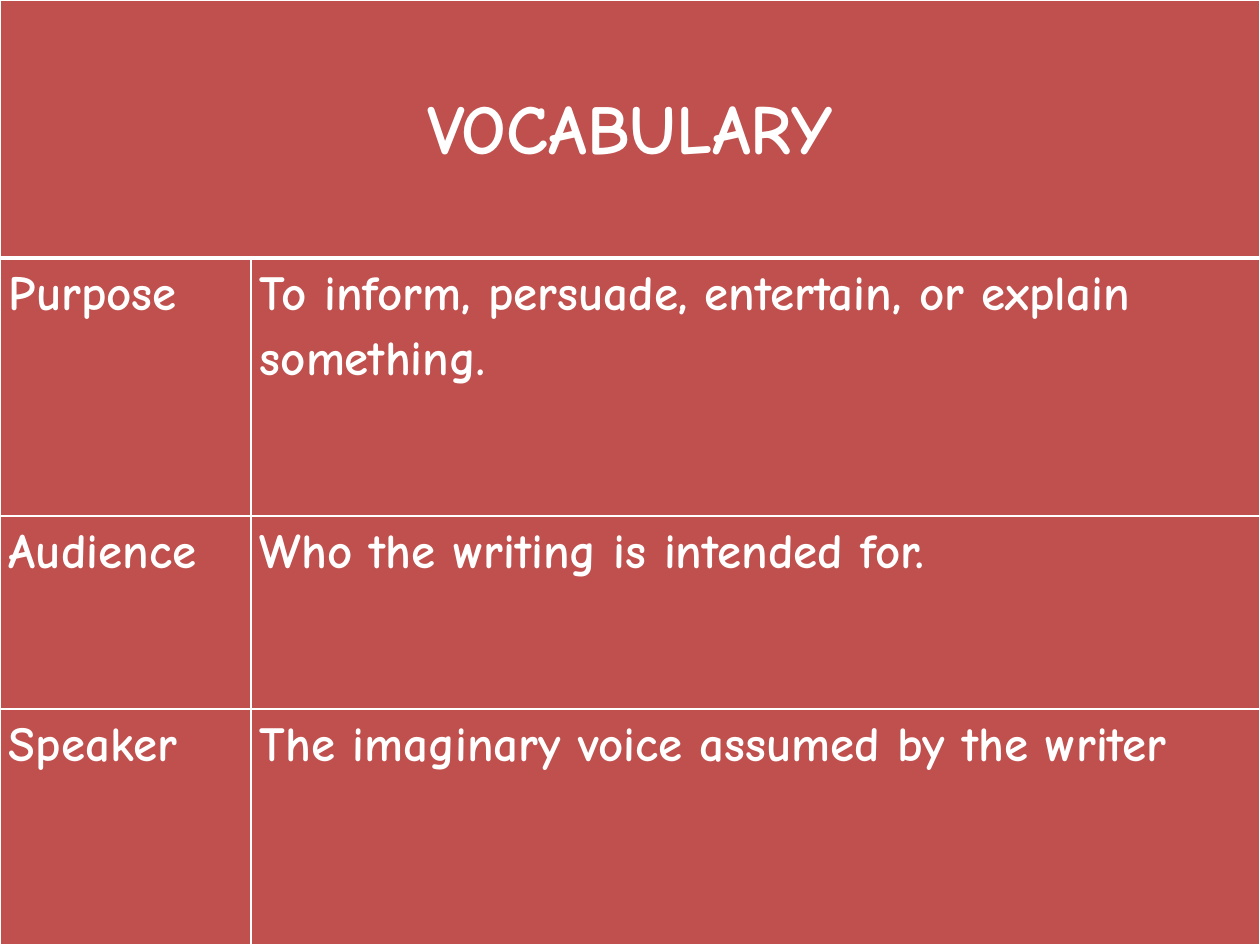
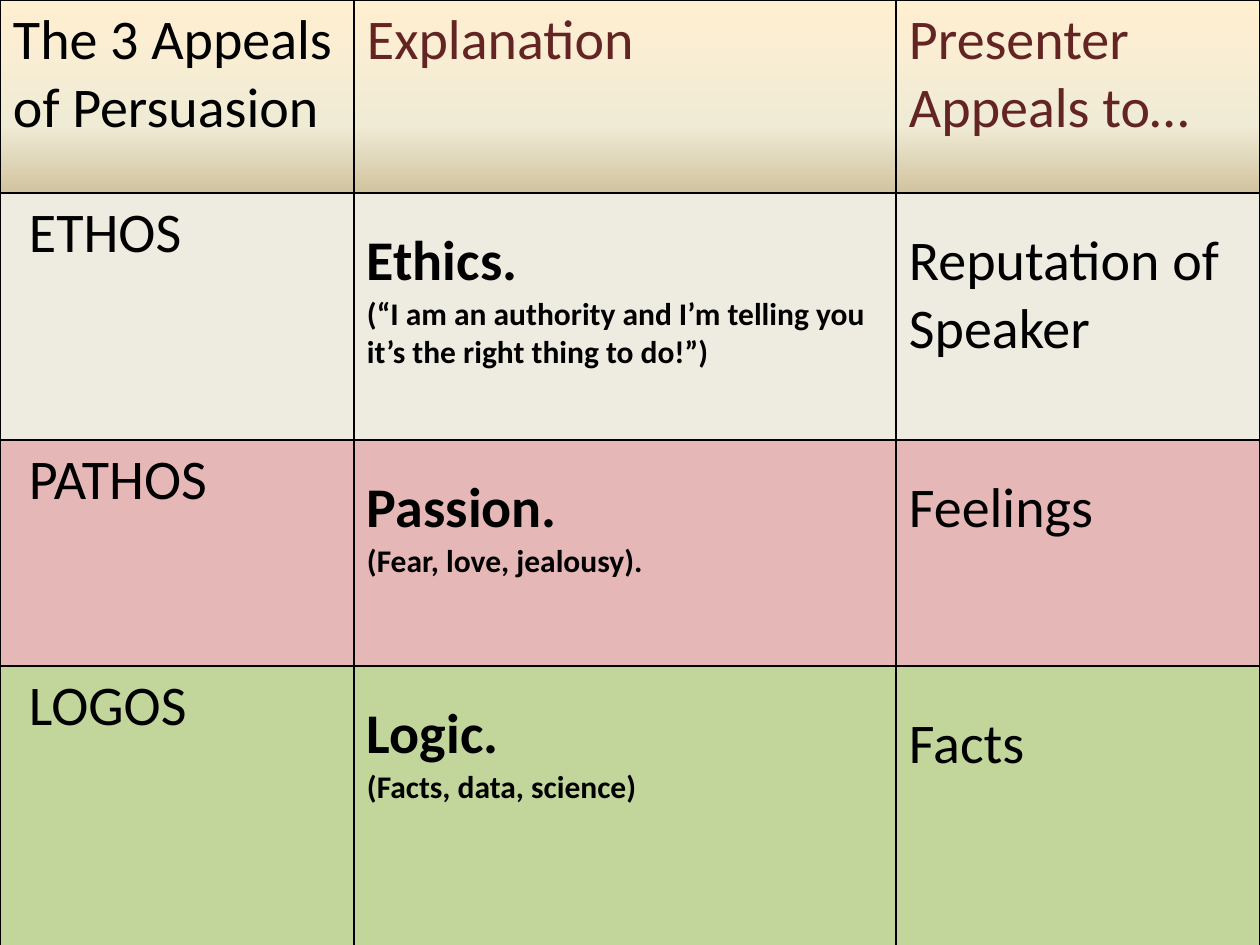
import pptx
import pptx.util
import pptx.dml.color
import pptx.enum.text
import pptx.oxml
import pptx.oxml.ns

PX = 914400 / 126
WIDTH, HEIGHT = 1260, 945

WHITE, BLACK, RED, MAROON = "FFFFFF", "000000", "C0504D", "632423"
SAND = [(0, "FFEFD1"), (65, "F0EBD5"), (100, "D1C39F")]
VOCABULARY = [
    ("Purpose", "To inform, persuade, entertain, or explain something."),
    ("Audience", "Who the writing is intended for."),
    ("Speaker", "The imaginary voice assumed by the writer"),
]
HEADINGS = [("The 3 Appeals of Persuasion", BLACK),
            ("Explanation", MAROON), ("Presenter Appeals to…", MAROON)]
# name, fill, meaning, example, what it appeals to, top margin of the last cell
APPEALS = [
    ("ETHOS", "EEECE1", "Ethics.",
     "(“I am an authority and I’m telling you it’s the right thing to do!”)",
     "Reputation of Speaker", 34),
    ("PATHOS", "E5B8B7", "Passion.", "(Fear, love, jealousy).", "Feelings", 34),
    ("LOGOS", "C2D59B", "Logic.", "(Facts, data, science)", "Facts", 44),
]


def px(n):
    return pptx.util.Emu(round(n * PX))


def rgb(color):
    return pptx.dml.color.RGBColor.from_string(color)


def add_slide(prs):
    s = prs.slides.add_slide(prs.slide_layouts[6])
    fill = s.background.fill
    fill.solid()
    fill.fore_color.rgb = rgb(BLACK)
    return s


def add_grid(s, x, y, cols, rows):
    """Add an unstyled table with the given column widths and row heights."""
    frame = s.shapes.add_table(len(rows), len(cols), px(x), px(y),
                               px(sum(cols)), px(sum(rows)))
    table = frame.table
    table.first_row = table.horz_banding = False
    for column, width in zip(table.columns, cols):
        column.width = px(width)
    for row, height in zip(table.rows, rows):
        row.height = px(height)
    return table


def fill_cell(cell, fill):
    """Fill with one colour, or downwards through (percent, colour) stops."""
    if isinstance(fill, str):
        cell.fill.solid()
        cell.fill.fore_color.rgb = rgb(fill)
        return
    stops = "".join(f'<a:gs pos="{pos * 1000}"><a:srgbClr val="{color}"/></a:gs>'
                    for pos, color in fill)
    cell._tc.get_or_add_tcPr().append(pptx.oxml.parse_xml(
        f'<a:gradFill {pptx.oxml.ns.nsdecls("a")} rotWithShape="1">'
        f'<a:gsLst>{stops}</a:gsLst><a:lin ang="5400000" scaled="0"/></a:gradFill>'))


def border_cell(cell, color, top=1, bottom=1):
    tcPr = cell._tc.get_or_add_tcPr()
    widths = {"L": 1, "R": 1, "T": top, "B": bottom}
    for i, (side, width) in enumerate(widths.items()):
        tcPr.insert(i, pptx.oxml.parse_xml(
            f'<a:ln{side} {pptx.oxml.ns.nsdecls("a")} w="{width * 12700}">'
            f'<a:solidFill><a:srgbClr val="{color}"/></a:solidFill></a:ln{side}>'))


def set_margins(cell, left, top, right, bottom):
    cell.margin_left, cell.margin_top = px(left), px(top)
    cell.margin_right, cell.margin_bottom = px(right), px(bottom)


def write(p, text, size, font, color, bold=False):
    r = p.add_run()
    r.text = text
    r.font.size = pptx.util.Pt(size)
    r.font.name = font
    r.font.bold = bold
    r.font.color.rgb = rgb(color)


def add_vocabulary(s, x, y):
    table = add_grid(s, x, y, [251, 1009], [258, 258, 193, 236])

    def add_text(cell, text, size, top=0):
        set_margins(cell, 9, top, 9, 0)
        p = cell.text_frame.paragraphs[0]
        p.line_spacing = 1.15
        write(p, text, size, "Comic Neue", WHITE, bold=True)
        return p

    title = table.cell(0, 0)
    title.merge(table.cell(0, 1))
    p = add_text(title, "VOCABULARY", 40, top=79)
    p.alignment = pptx.enum.text.PP_ALIGN.CENTER
    for i, entry in enumerate(VOCABULARY, 1):
        for j, text in enumerate(entry):
            add_text(table.cell(i, j), text, 28)
    for i, row in enumerate(table.rows):
        for cell in row.cells:
            fill_cell(cell, RED)
            border_cell(cell, WHITE, top=3 if i == 1 else 1,
                        bottom=3 if i == 0 else 1)


def add_appeals(s, x, y):
    table = add_grid(s, x, y, [354, 542, 364], [193, 247, 226, 286])

    def add_text(cell, text, fill, color=BLACK, bold=False, left=13, top=6):
        set_margins(cell, left, top, 13, 6)
        fill_cell(cell, fill)
        border_cell(cell, BLACK)
        write(cell.text_frame.paragraphs[0], text, 32, "Calibri", color, bold)

    for j, (text, color) in enumerate(HEADINGS):
        add_text(table.cell(0, j), text, SAND, color)
    for i, (name, fill, meaning, example, target, top) in enumerate(APPEALS, 1):
        add_text(table.cell(i, 0), name, fill, left=29)
        explanation = table.cell(i, 1)
        add_text(explanation, meaning, fill, bold=True, top=34)
        write(explanation.text_frame.add_paragraph(), example, 18, "Calibri",
              BLACK, bold=True)
        add_text(table.cell(i, 2), target, fill, top=top)


def main():
    prs = pptx.Presentation()
    prs.slide_width, prs.slide_height = px(WIDTH), px(HEIGHT)
    add_vocabulary(add_slide(prs), 0, 0)
    add_appeals(add_slide(prs), 0, 0)
    prs.save("out.pptx")


if __name__ == "__main__":
    main()
